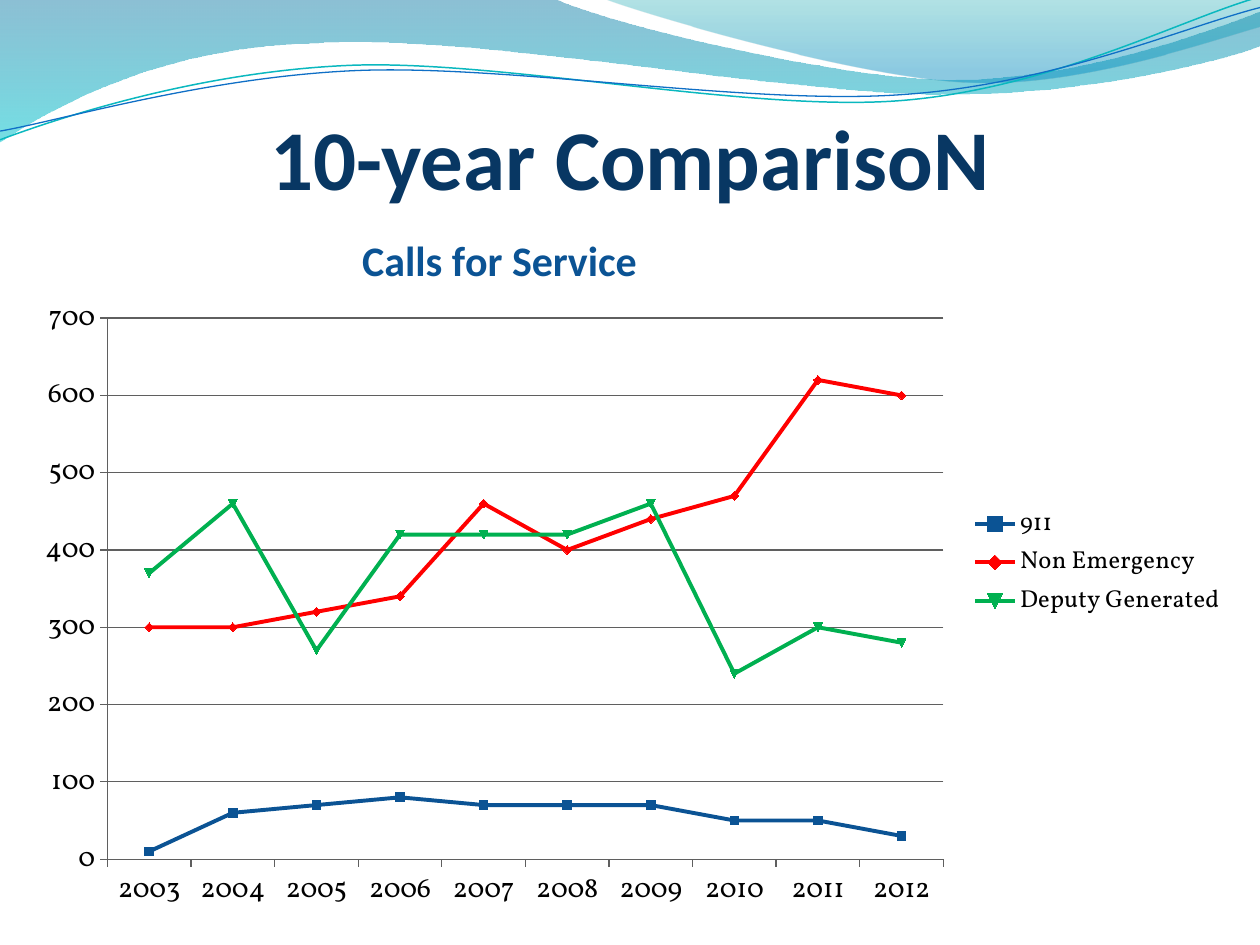
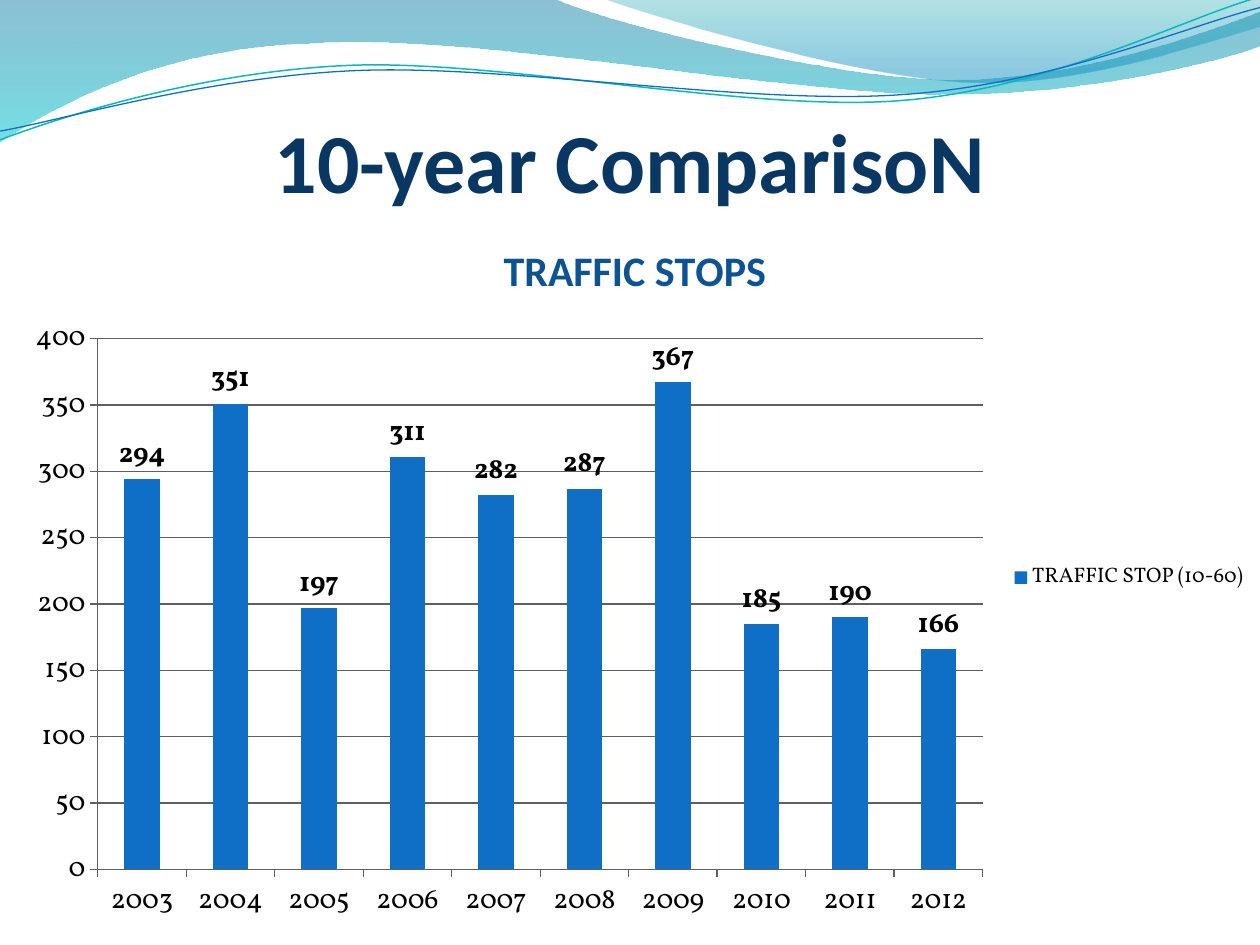
import lxml.etree
import pptx
import pptx.chart.data
import pptx.dml.color
import pptx.enum.chart
import pptx.enum.text
import pptx.oxml.ns
import pptx.util

Pt = pptx.util.Pt
qn = pptx.oxml.ns.qn

YEARS = [str(year) for year in range(2003, 2013)]

# Each wave is a start point and segments: 2 numbers for a line, 6 for a Bézier curve.
LEFT_BAND = [(0, 0), (316.8, -0.7),
             (342.7, 12.2, 478.1, 45.4, 545.8, 45.4),
             (614.2, 45.4, 689.8, 18.7, 720, 6.5), (720.7, 25.9),
             (707.8, 31.7, 626.4, 54.7, 537.1, 54),
             (447.8, 54, 275, 20.2, 185, 24.5),
             (92.9, 25.9, 33.1, 59.8, -0.7, 81.4)]
RIGHT_BAND = [(344.9, -0.7),
              (366.5, 7.9, 491, 44.6, 553.7, 46.8),
              (616.3, 49.7, 691.9, 23, 720, 15.1), (720, 0)]
TEAL_WAVE = [(0, 79.9),
             (34.6, 67, 113.8, 41, 199.4, 37.4),
             (284.4, 33.8, 427, 64.1, 513.4, 57.6),
             (599.8, 51.1, 675.4, 10.8, 718.6, -1.4)]
BLUE_WAVE = [(0, 74.9),
             (33.8, 69.1, 118.1, 43.9, 203.8, 40.3),
             (290.2, 36.7, 429.8, 60.5, 516.2, 54),
             (601.9, 48.2, 677.5, 15.1, 720, 4.3)]


def rgb(color):
    return pptx.dml.color.RGBColor.from_string(color)


def set_font(font, size=None, color=None, name=None, bold=None):
    font.size = Pt(size) if size else None
    font.name = name
    font.bold = bold
    if color:
        font.color.rgb = rgb(color)


def write(text_frame, text, **font_format):
    paragraph = text_frame.paragraphs[0]
    paragraph.alignment = pptx.enum.text.PP_ALIGN.CENTER
    run = paragraph.add_run()
    run.text = text
    set_font(run.font, **font_format)


def bend(shape, segments):
    """Join the three line steps of each curved segment into one Bézier curve."""
    steps = iter(list(shape.element.iter(qn("a:lnTo"))))
    for segment in segments:
        group = [next(steps) for _ in range(len(segment) // 2)]
        if len(group) == 3:
            curve = lxml.etree.Element(qn("a:cubicBezTo"))
            group[0].addprevious(curve)
            for step in group:
                curve.append(step[0])
                step.getparent().remove(step)


def set_layout(chart, tag, index, size, place, inner=False):
    """Place a chart part; place and size are in points within the chart."""
    part = next(chart.element.iter(qn(tag)))
    for old in part.findall(qn("c:layout")):
        part.remove(old)
    layout = lxml.etree.Element(qn("c:layout"))
    part.insert(index, layout)
    manual = lxml.etree.SubElement(layout, qn("c:manualLayout"))
    if inner:
        lxml.etree.SubElement(manual, qn("c:layoutTarget"), val="inner")
    for key in "xy":
        lxml.etree.SubElement(manual, qn(f"c:{key}Mode"), val="edge")
    for key, length, whole in zip("xywh", place, size * 2):
        lxml.etree.SubElement(manual, qn(f"c:{key}"), val=f"{length / whole:.4f}")


class Deck:
    navy, blue, bright, axis_gray = "083763", "0B5394", "0F6FC6", "5F5F5F"
    heading_font, chart_font = "Calibri", "Vollkorn"

    def __init__(self):
        self.presentation = pptx.Presentation()
        self.presentation.slide_width = Pt(720)
        self.presentation.slide_height = Pt(540)
        self.slide = None

    def add_slide(self):
        self.slide = self.presentation.slides.add_slide(self.presentation.slide_layouts[5])

    def wave(self, segments, close):
        start, *rest = segments
        points = [(Pt(x), Pt(y)) for segment in rest
                  for x, y in zip(segment[::2], segment[1::2])]
        builder = self.slide.shapes.build_freeform(*map(Pt, start))
        builder.add_line_segments(points, close=close)
        shape = builder.convert_to_shape()
        bend(shape, rest)
        shape.shadow.inherit = False
        return shape

    def band(self, segments, stops):
        """Draw a closed wave; stops are (position, colour, opacity in %)."""
        shape = self.wave(segments, close=True)
        shape.line.fill.background()
        shape.fill.gradient()
        shape.fill.gradient_angle = 270
        for stop, (position, color, _) in zip(shape.fill.gradient_stops, stops):
            stop.position = position
            stop.color.rgb = rgb(color)
        for element, (_, _, opacity) in zip(shape.element.iter(qn("a:srgbClr")), stops):
            lxml.etree.SubElement(element, qn("a:alpha"), val=str(opacity * 1000))
        return shape

    def wave_line(self, segments, color, width):
        shape = self.wave(segments, close=False)
        shape.fill.background()
        shape.line.color.rgb = rgb(color)
        shape.line.width = Pt(width)
        return shape

    def master_waves(self):
        """Draw the waves and move them behind everything on the slide master."""
        shapes = [
            self.band(LEFT_BAND, [(0, "0074A1", 45), (1, "00C6CF", 55)]),
            self.band(RIGHT_BAND, [(0, "00A1A9", 30), (0.8, "008BBF", 45)]),
            self.wave_line(TEAL_WAVE, "0AB8BF", 0.85),
            self.wave_line(BLUE_WAVE, self.bright, 0.75),
        ]
        tree = self.presentation.slide_master.shapes.element
        for index, shape in enumerate(shapes, start=2):
            tree.insert(index, shape.element)

    def title(self, text, top, height, size):
        shape = self.slide.shapes.title
        shape.left, shape.top, shape.width, shape.height = map(Pt, (36, top, 648, height))
        frame = shape.text_frame
        frame.auto_size = pptx.enum.text.MSO_AUTO_SIZE.NONE
        frame.vertical_anchor = pptx.enum.text.MSO_ANCHOR.BOTTOM
        frame.margin_left = frame.margin_right = frame.margin_bottom = 0
        frame.margin_top = Pt(3.6)
        write(frame, text, size=size, color=self.navy, name=self.heading_font, bold=True)

    def chart(self, kind, box, title, series, maximum, step, legend_size,
              title_place, plot_place, legend_place):
        data = pptx.chart.data.CategoryChartData()
        data.categories = YEARS
        for name, values in series.items():
            data.add_series(name, values)
        chart = self.slide.shapes.add_chart(kind, *map(Pt, box), data).chart
        set_font(chart.font, size=10, color="000000", name=self.chart_font)

        chart.has_title = True
        write(chart.chart_title.text_frame, title, size=24, color=self.blue,
              name=self.heading_font, bold=True)
        chart.has_legend = True
        chart.legend.position = pptx.enum.chart.XL_LEGEND_POSITION.RIGHT
        chart.legend.include_in_layout = False
        set_font(chart.legend.font, size=legend_size)

        for axis in (chart.category_axis, chart.value_axis):
            axis.major_tick_mark = pptx.enum.chart.XL_TICK_MARK.OUTSIDE
            set_font(axis.tick_labels.font, size=16)
            self.thin_line(axis.format.line)
        value_axis = chart.value_axis
        value_axis.minimum_scale, value_axis.maximum_scale = 0, maximum
        value_axis.major_unit = step
        value_axis.has_major_gridlines = True
        self.thin_line(value_axis.major_gridlines.format.line)

        size = box[2:]
        set_layout(chart, "c:title", 1, size, title_place)
        set_layout(chart, "c:plotArea", 0, size, plot_place, inner=True)
        set_layout(chart, "c:legend", 1, size, legend_place)
        chart.plots[0].vary_by_categories = False
        return chart

    def thin_line(self, line):
        line.color.rgb = rgb(self.axis_gray)
        line.width = Pt(0.75)

    def line_chart(self, colors, **options):
        chart = self.chart(pptx.enum.chart.XL_CHART_TYPE.LINE_MARKERS, **options)
        for series, color in zip(chart.plots[0].series, colors):
            series.smooth = False
            series.format.line.color.rgb = rgb(color)
            series.format.line.width = Pt(2.25)
            series.marker.size = 5
            series.marker.format.fill.solid()
            series.marker.format.fill.fore_color.rgb = rgb(color)
            series.marker.format.line.color.rgb = rgb(color)

    def column_chart(self, color, **options):
        chart = self.chart(pptx.enum.chart.XL_CHART_TYPE.COLUMN_CLUSTERED, **options)
        plot = chart.plots[0]
        plot.gap_width = 150
        fill = plot.series[0].format.fill
        fill.solid()
        fill.fore_color.rgb = rgb(color)
        plot.has_data_labels = True
        labels = plot.data_labels
        labels.show_value = True
        labels.position = pptx.enum.chart.XL_LABEL_POSITION.OUTSIDE_END
        set_font(labels.font, size=16, bold=True)


def main():
    deck = Deck()
    heading = "10-year ComparisoN"

    deck.add_slide()
    deck.master_waves()
    deck.title(heading, top=60.1, height=58.3, size=48.6)
    deck.line_chart(
        colors=[deck.blue, "FF0000", "00B050"],
        box=(12.2, 113.8, 696.2, 414),
        title="Calls for Service",
        series={
            "911": [10, 60, 70, 80, 70, 70, 70, 50, 50, 30],
            "Non Emergency": [300, 300, 320, 340, 460, 400, 440, 470, 620, 600],
            "Deputy Generated": [370, 460, 270, 420, 420, 420, 460, 240, 300, 280],
        },
        maximum=700, step=100, legend_size=14,
        title_place=(190.4, 14.6),
        plot_place=(49.2, 68, 477.7, 309.2),
        legend_place=(541.9, 173.1, 146.2, 69))

    deck.add_slide()
    deck.title(heading, top=55.4, height=64.8, size=48)
    deck.column_chart(
        color=deck.bright,
        box=(5.8, 126, 714.2, 408.2),
        title="TRAFFIC STOPS",
        series={"TRAFFIC STOP (10-60)": [294, 351, 197, 311, 282, 287, 367, 185, 190, 166]},
        maximum=400, step=50, legend_size=12,
        title_place=(277.7, 8.3),
        plot_place=(50, 67.5, 505.7, 303.4),
        legend_place=(568, 191.9, 142.8, 24.5))

    deck.presentation.save("out.pptx")


if __name__ == "__main__":
    main()
